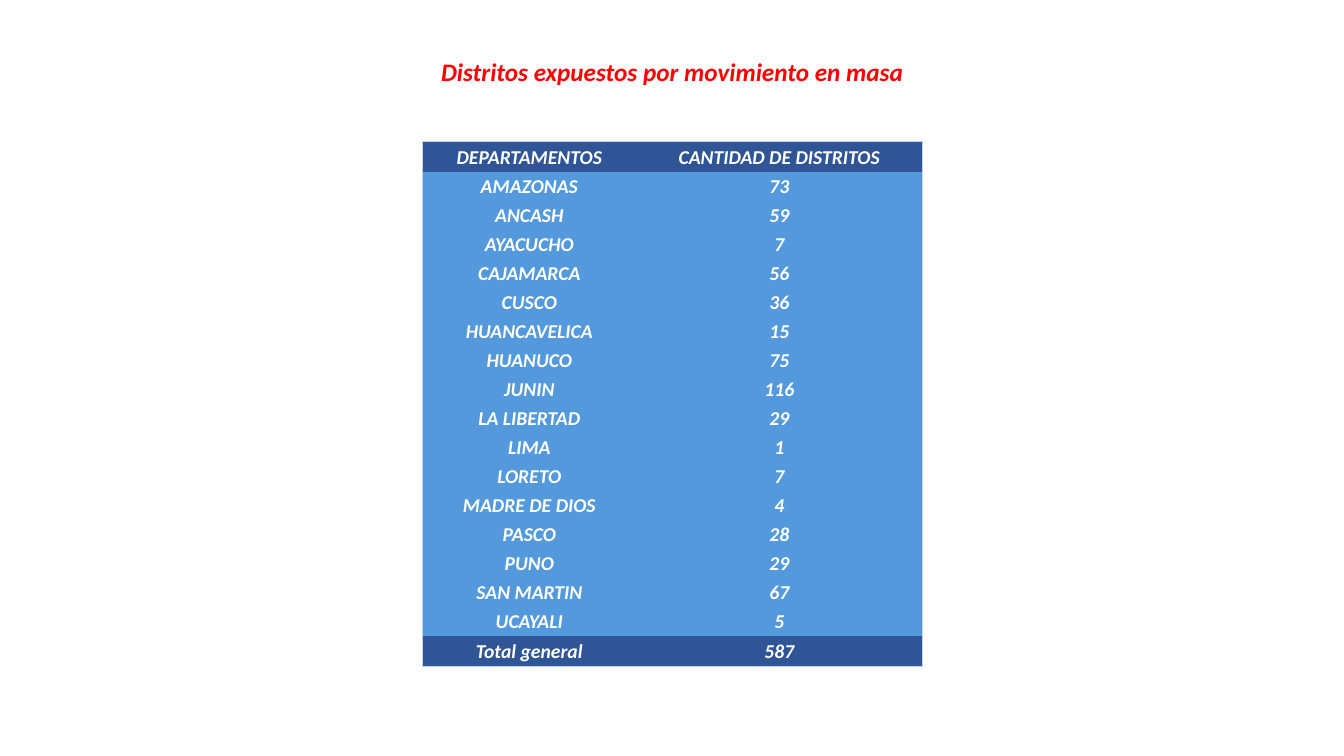
from dataclasses import dataclass

from lxml import etree
from pptx import Presentation
from pptx import util as u
from pptx.dml.color import RGBColor
from pptx.enum import text
from pptx.oxml.ns import qn


@dataclass(frozen=True)
class Theme:
    font: str = "Calibri"
    title_size: int = 18
    cell_size: int = 14
    title: str = "FF0000"
    cell_text: str = "FFFFFF"
    band: str = "2F5597"
    body: str = "5399DB"
    border: str = "C4D5EB"
    border_pt: float = 0.5


@dataclass(frozen=True)
class Row:
    department: str
    districts: str
    band: bool = False


THEME = Theme()
NO_STYLE_NO_GRID = "{2D5ABB26-0587-4C30-8999-92F81FD0307C}"
COLUMN_WIDTHS = (u.Cm(5.38), u.Cm(7.22))
BAND_HEIGHT, BODY_HEIGHT = u.Cm(0.77), u.Cm(0.73)
ROWS = [
    Row("DEPARTAMENTOS", "CANTIDAD DE DISTRITOS", band=True),
    Row("AMAZONAS", "73"),
    Row("ANCASH", "59"),
    Row("AYACUCHO", "7"),
    Row("CAJAMARCA", "56"),
    Row("CUSCO", "36"),
    Row("HUANCAVELICA", "15"),
    Row("HUANUCO", "75"),
    Row("JUNIN", "116"),
    Row("LA LIBERTAD", "29"),
    Row("LIMA", "1"),
    Row("LORETO", "7"),
    Row("MADRE DE DIOS", "4"),
    Row("PASCO", "28"),
    Row("PUNO", "29"),
    Row("SAN MARTIN", "67"),
    Row("UCAYALI", "5"),
    Row("Total general", "587", band=True),
]


def write(tf, content: str, size: int, color: str) -> None:
    """Write one centred bold italic paragraph."""
    p = tf.paragraphs[0]
    p.text = content
    p.alignment = text.PP_ALIGN.CENTER
    p.font.name, p.font.size = THEME.font, u.Pt(size)
    p.font.bold = p.font.italic = True
    p.font.color.rgb = RGBColor.from_string(color)


def add_borders(cell, sides: list[str]) -> None:
    """Line the given sides; borders must come before the fill."""
    tc_pr = cell._tc.get_or_add_tcPr()
    for i, side in enumerate(sides):
        ln = etree.Element(qn(f"a:ln{side}"), w=str(u.Pt(THEME.border_pt)))
        fill = etree.SubElement(ln, qn("a:solidFill"))
        etree.SubElement(fill, qn("a:srgbClr"), val=THEME.border)
        tc_pr.insert(i, ln)


def add_title(s, content: str) -> None:
    sp = s.shapes.add_textbox(u.Cm(10.8), u.Cm(1.3), u.Cm(12.28), u.Cm(1.02))
    tf = sp.text_frame
    tf.word_wrap = False
    tf.auto_size = text.MSO_AUTO_SIZE.SHAPE_TO_FIT_TEXT
    write(tf, content, THEME.title_size, THEME.title)


def add_district_table(s, rows: list[Row]) -> None:
    heights = [BAND_HEIGHT if row.band else BODY_HEIGHT for row in rows]
    frame = s.shapes.add_table(len(rows), len(COLUMN_WIDTHS), u.Cm(10.65), u.Cm(3.57),
                               sum(COLUMN_WIDTHS), sum(heights))
    table = frame.table
    table._tbl.tblPr.find(qn("a:tableStyleId")).text = NO_STYLE_NO_GRID
    for column, width in zip(table.columns, COLUMN_WIDTHS):
        column.width = width

    for i, (row, height) in enumerate(zip(rows, heights)):
        table.rows[i].height = height
        for j, content in enumerate((row.department, row.districts)):
            cell = table.cell(i, j)
            cell.margin_left = cell.margin_right = cell.margin_top = u.Cm(0.02)
            cell.margin_bottom = 0
            cell.vertical_anchor = text.MSO_ANCHOR.MIDDLE
            cell.fill.solid()
            cell.fill.fore_color.rgb = RGBColor.from_string(
                THEME.band if row.band else THEME.body)
            write(cell.text_frame, content, THEME.cell_size, THEME.cell_text)
            # Only the outer edge of the table is lined
            edges = {"L": j == 0, "R": j == len(COLUMN_WIDTHS) - 1,
                     "T": i == 0, "B": i == len(rows) - 1}
            add_borders(cell, [side for side, outer in edges.items() if outer])


def main() -> None:
    prs = Presentation()
    prs.slide_width, prs.slide_height = u.Cm(33.87), u.Cm(19.05)
    s = prs.slides.add_slide(prs.slide_layouts[6])
    # Heading
    add_title(s, "Distritos expuestos por movimiento en masa")
    # Districts by department
    add_district_table(s, ROWS)
    prs.save("out.pptx")


if __name__ == "__main__":
    main()
